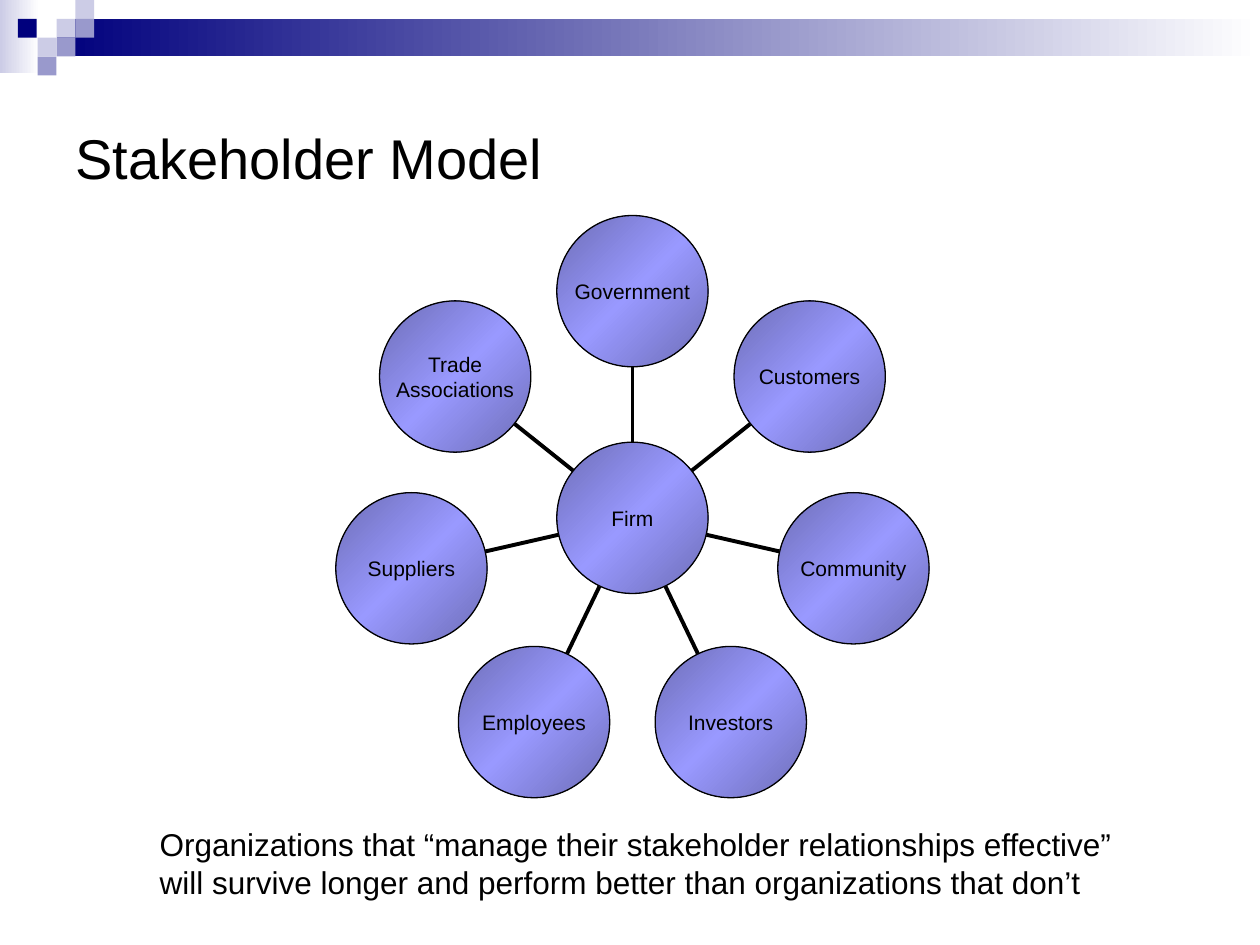
from copy import deepcopy
from math import cos, pi, sin

from pptx import Presentation
from pptx import util as u
from pptx.dml.color import RGBColor
from pptx.enum import shapes, text
from pptx.oxml.ns import qn
from lxml import etree

BLACK = RGBColor(0, 0, 0)
WHITE = RGBColor(255, 255, 255)
NAVY = RGBColor(0x00, 0x00, 0x7D)
PALE = RGBColor(0xCC, 0xCC, 0xE6)
MID = RGBColor(0x99, 0x99, 0xCC)
EDGE = RGBColor(0x6D, 0x6D, 0xB6)
GLOW = RGBColor(0x99, 0x99, 0xFF)

TITLE = "Stakeholder Model"
HUB = "Firm"
RING = ["Government", "Customers", "Community", "Investors",
        "Employees", "Suppliers", "Trade\nAssociations"]
CAPTION = ("Organizations that “manage their stakeholder relationships effective” "
           "will survive longer and perform better than organizations that don’t")
BANDS = [(0, 0, 0.79, 1.47, PALE), (1.14, 0.38, 24.26, 0.76, NAVY)]
TILES = [(1.14, 0.38, PALE), (1.52, 0, PALE), (1.52, 0.38, MID),
         (0.76, 0.76, PALE), (0.36, 0.38, NAVY), (1.14, 0.76, MID),
         (0.76, 1.14, MID)]
TILE = 0.38
MID_X, MID_Y = 12.75, 10.44
SIZE, REACH = 3.05, 4.57


def place(item, left, top, wide, high):
    item.left, item.top = u.Cm(left), u.Cm(top)
    item.width, item.height = u.Cm(wide), u.Cm(high)


def write(item, words, size=12, align=text.PP_ALIGN.LEFT,
          anchor=text.MSO_ANCHOR.MIDDLE, wrap=True, inset=None):
    frame = item.text_frame
    frame.text = words
    frame.word_wrap = wrap
    frame.vertical_anchor = anchor
    if inset is not None:
        frame.margin_left = frame.margin_right = u.Cm(inset)
        frame.margin_top = frame.margin_bottom = u.Cm(inset)
    for para in frame.paragraphs:
        para.alignment = align
        font = para.font
        font.name, font.size, font.color.rgb = "Arial", u.Pt(size), BLACK


def shade(item, hues, angle=0):
    fill = item.fill
    fill.gradient()
    fill.gradient_angle = angle
    stops = item._element.spPr.find(qn("a:gradFill")).find(qn("a:gsLst"))
    while len(stops) < len(hues):
        stops.append(deepcopy(stops[-1]))
    for i, (stop, hue) in enumerate(zip(fill.gradient_stops, hues)):
        stop.position = i / (len(hues) - 1)
        stop.color.rgb = hue


def draw(slide, kind, left, top, wide, high):
    item = slide.shapes.add_shape(kind, *map(u.Cm, (left, top, wide, high)))
    item.shadow.inherit = False
    item.line.fill.background()
    return item


def ball(slide, x, y, words):
    item = draw(slide, shapes.MSO_SHAPE.OVAL,
                x - SIZE / 2, y - SIZE / 2, SIZE, SIZE)
    shade(item, [EDGE, GLOW, EDGE], angle=315)
    item.line.color.rgb, item.line.width = BLACK, u.Pt(0.75)
    write(item, words, align=text.PP_ALIGN.CENTER, wrap=False, inset=0)


def spoke(slide, dx, dy):
    near, far = SIZE / 2, REACH - SIZE / 2
    ends = (MID_X + near * dx, MID_Y + near * dy,
            MID_X + far * dx, MID_Y + far * dy)
    line = slide.shapes.add_connector(shapes.MSO_CONNECTOR.STRAIGHT,
                                      *map(u.Cm, ends))
    line.line.color.rgb, line.line.width = BLACK, u.Pt(2.25)
    etree.SubElement(line._element.spPr, qn("a:effectLst"))


def main():
    deck = Presentation()
    deck.slide_width, deck.slide_height = u.Cm(25.4), u.Cm(19.05)
    slide = deck.slides.add_slide(deck.slide_layouts[5])

    for *box, hue in BANDS:
        shade(draw(slide, shapes.MSO_SHAPE.RECTANGLE, *box), [hue, WHITE])
    for left, top, hue in TILES:
        tile = draw(slide, shapes.MSO_SHAPE.RECTANGLE, left, top, TILE, TILE)
        tile.fill.solid()
        tile.fill.fore_color.rgb = hue

    title = slide.shapes.title
    place(title, 1.27, 1.27, 22.86, 3.81)
    write(title, TITLE, size=32)

    for i, name in enumerate(RING):
        turn = 2 * pi * i / len(RING)
        dx, dy = sin(turn), -cos(turn)
        spoke(slide, dx, dy)
        ball(slide, MID_X + REACH * dx, MID_Y + REACH * dy, name)
    ball(slide, MID_X, MID_Y, HUB)

    note = slide.shapes.add_textbox(*map(u.Cm, (2.97, 16.51, 19.89, 1.8)))
    write(note, CAPTION, size=18, anchor=text.MSO_ANCHOR.TOP)
    note.text_frame.auto_size = text.MSO_AUTO_SIZE.SHAPE_TO_FIT_TEXT

    deck.save("out.pptx")


if __name__ == "__main__":
    main()
